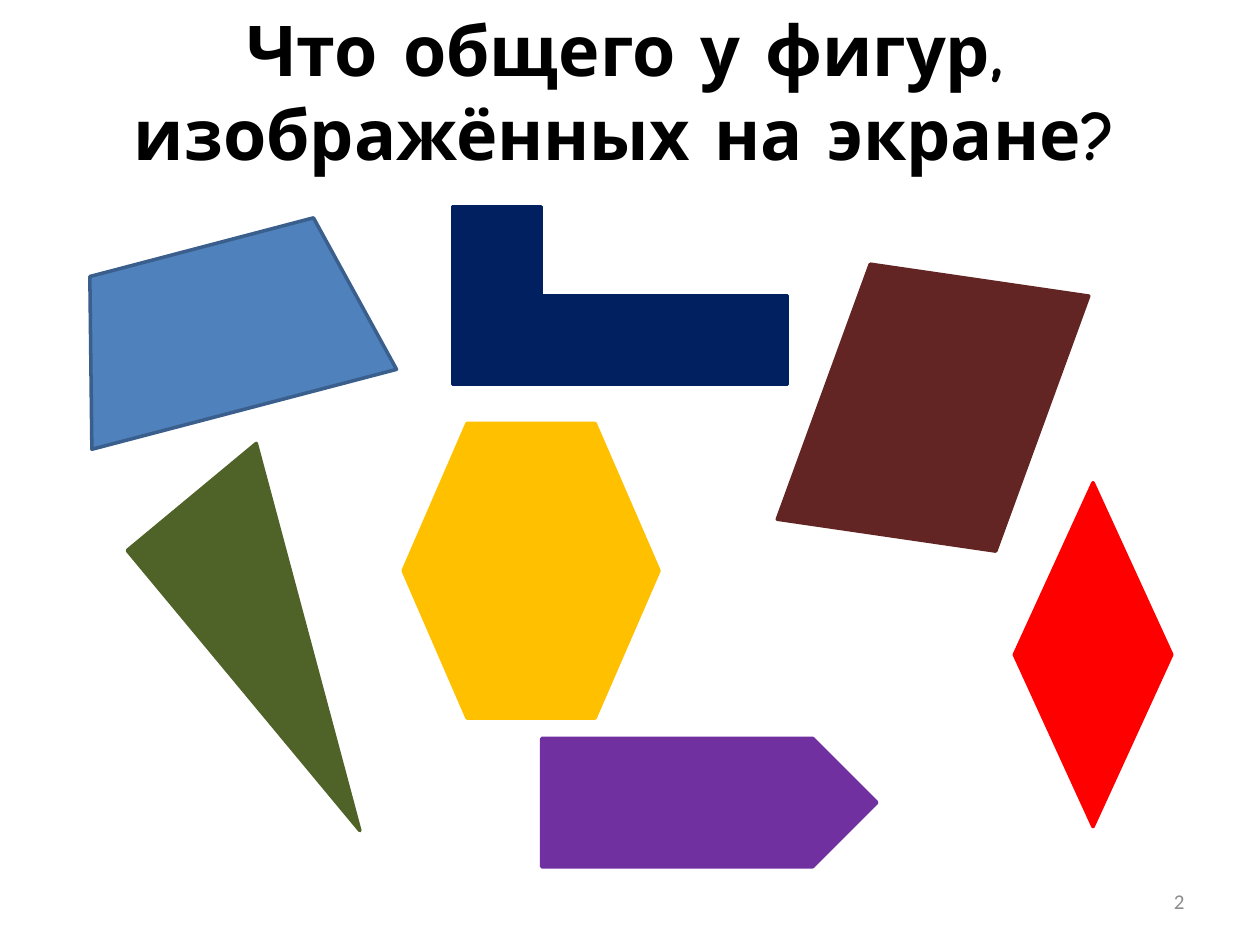
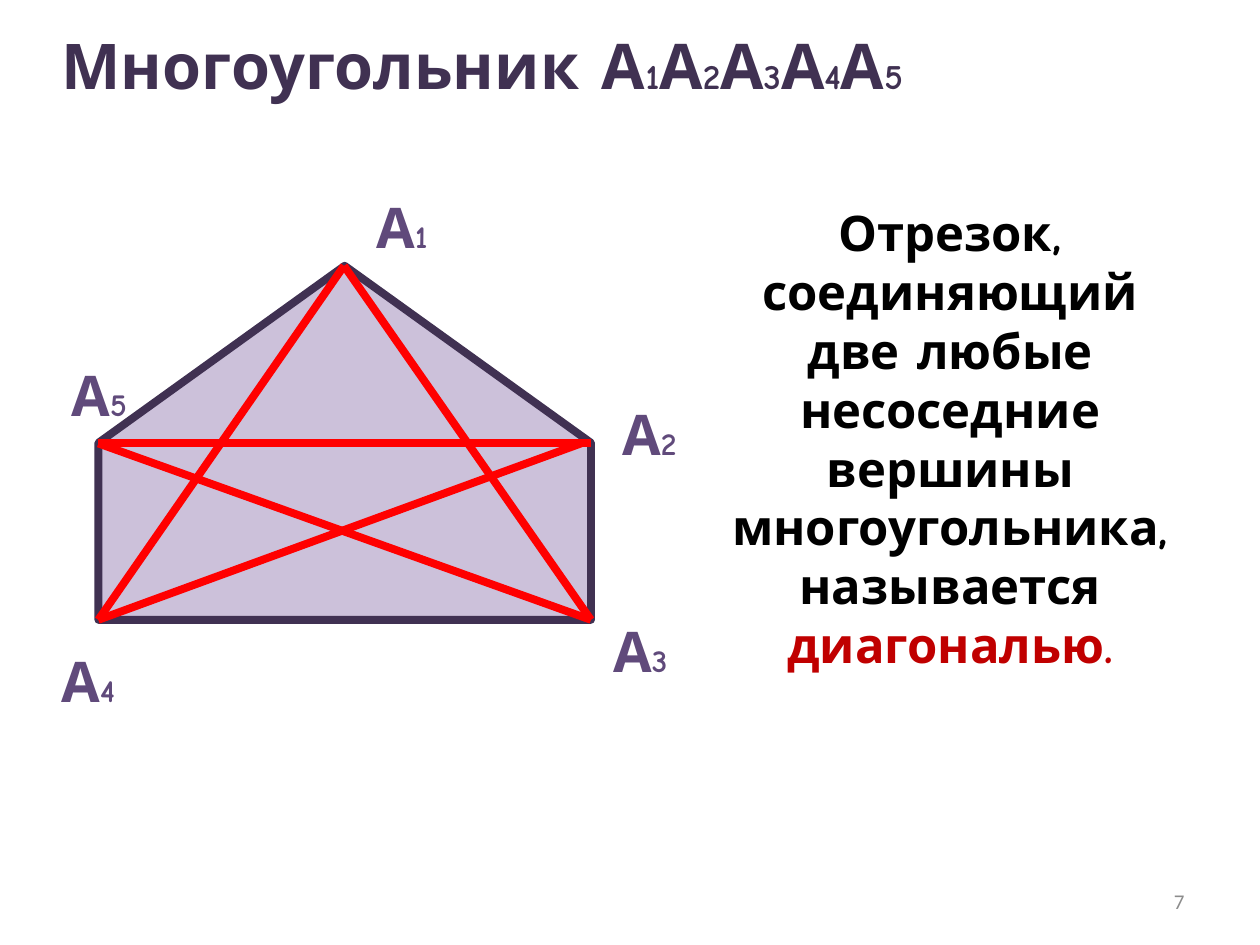
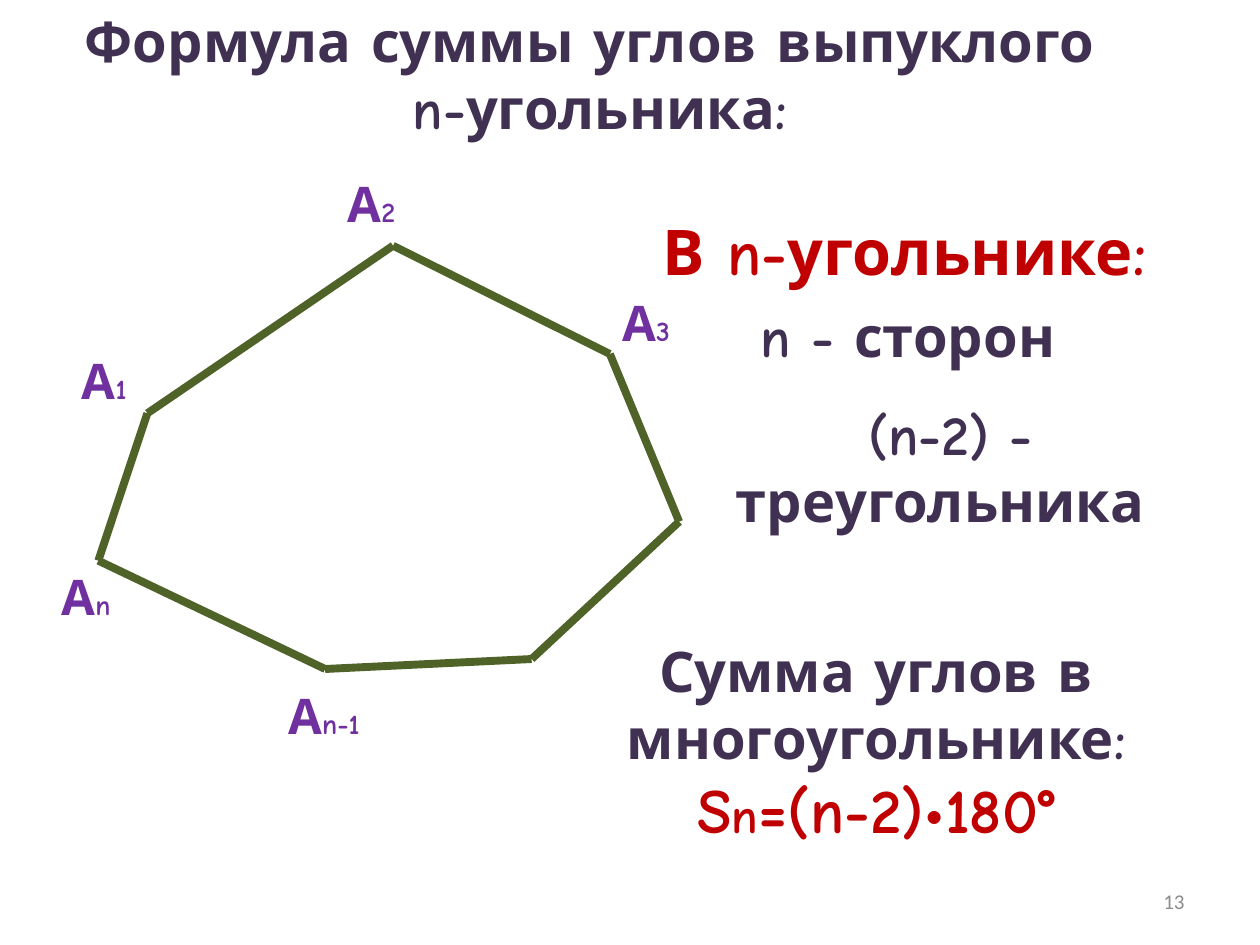
from dataclasses import dataclass
from typing import NamedTuple, Optional

from lxml import etree
from pptx import Presentation
from pptx.dml.color import RGBColor
from pptx.enum.shapes import MSO_CONNECTOR, MSO_SHAPE
from pptx.enum.text import MSO_ANCHOR, MSO_AUTO_SIZE, PP_ALIGN
from pptx.oxml.ns import qn
from pptx.util import Pt

LEFT, CENTER, RIGHT = PP_ALIGN.LEFT, PP_ALIGN.CENTER, PP_ALIGN.RIGHT
TOP, MIDDLE = MSO_ANCHOR.TOP, MSO_ANCHOR.MIDDLE
STRAIGHT = MSO_CONNECTOR.STRAIGHT


@dataclass(frozen=True)
class Theme:
    font: str = "Comic Neue"
    number_font: str = "Calibri"

    black: str = "000000"
    gray: str = "8C8C8C"
    plum: str = "403152"
    violet: str = "604A7B"
    lilac: str = "CCC1DA"
    purple: str = "7030A0"
    crimson: str = "C00000"
    red: str = "FF0000"
    olive: str = "4F6228"
    blue: str = "4F81BD"
    steel: str = "3A5F8C"
    navy: str = "002060"
    maroon: str = "632523"
    amber: str = "FFC000"

    headline: int = 40
    title: int = 36
    body: int = 32
    small_body: int = 28
    title_index: int = 20
    label_index: int = 18
    small_index: int = 16
    number: int = 12

    outline: float = 2
    stroke: float = 4.5


class Span(NamedTuple):
    """A piece of text; an unset size or colour comes from its box."""
    text: str
    size: Optional[int] = None
    color: Optional[str] = None


class Deck:
    def __init__(self, theme):
        self.theme = theme
        self.presentation = Presentation()
        self.presentation.slide_width = Pt(720)
        self.presentation.slide_height = Pt(540)
        self.page = None

    def new_page(self, number):
        blank = self.presentation.slide_layouts[6]
        self.page = self.presentation.slides.add_slide(blank)
        self.text((516, 500.4, 168, 28.8), [[Span(str(number))]],
                  self.theme.number, self.theme.gray, RIGHT, MIDDLE,
                  font=self.theme.number_font, bold=False)

    def text(self, place, paragraphs, size, color, align=LEFT, anchor=TOP,
             font=None, bold=True):
        box = self.page.shapes.add_textbox(*map(Pt, place))
        frame = box.text_frame
        frame.word_wrap = True
        frame.auto_size = MSO_AUTO_SIZE.NONE
        frame.vertical_anchor = anchor
        for index, spans in enumerate(paragraphs):
            para = frame.add_paragraph() if index else frame.paragraphs[0]
            para.alignment = align
            for span in spans:
                run = para.add_run()
                run.text = span.text
                run.font.name = font or self.theme.font
                run.font.size = Pt(span.size or size)
                run.font.bold = bold
                run.font.color.rgb = RGBColor.from_string(span.color or color)

    def vertex_label(self, place, index, size, index_size, color):
        self.text(place, [[Span("А"), Span(index, index_size)]], size, color)

    def figure(self, kind, place, fill, line=None, width=None, rotation=0):
        shape = self.page.shapes.add_shape(kind, *map(Pt, place))
        shape.shadow.inherit = False
        shape.rotation = rotation
        shape.fill.solid()
        shape.fill.fore_color.rgb = RGBColor.from_string(fill)
        shape.line.color.rgb = RGBColor.from_string(line or fill)
        shape.line.width = Pt(width or self.theme.outline)

    def segment(self, start, end, color):
        line = self.page.shapes.add_connector(STRAIGHT, *map(Pt, start + end))
        line.line.color.rgb = RGBColor.from_string(color)
        line.line.width = Pt(self.theme.stroke)
        etree.SubElement(line._element.spPr, qn("a:effectLst"))


def add_figures_page(deck):
    theme = deck.theme
    deck.new_page(2)
    figures = [
        (MSO_SHAPE.TRAPEZOID, (37.4, 139.7, 180, 95.8), theme.blue, 345.3),
        (MSO_SHAPE.CORNER, (258.5, 118.1, 191.5, 101.5), theme.navy, 0),
        (MSO_SHAPE.RIGHT_TRIANGLE, (72, 316.1, 208.1, 95.8), theme.olive, 50.3),
        (MSO_SHAPE.FLOWCHART_DATA, (454.3, 157, 157.7, 151.9), theme.maroon, 8.3),
        (MSO_SHAPE.HEXAGON, (230.4, 241.9, 146.2, 168.5), theme.amber, 0),
        (MSO_SHAPE.PENTAGON, (309.6, 421.9, 191.5, 73.4), theme.purple, 0),
        (MSO_SHAPE.DIAMOND, (579.6, 275.8, 90, 196.6), theme.red, 0),
    ]
    for kind, place, fill, rotation in figures:
        line = theme.steel if fill == theme.blue else fill
        deck.figure(kind, place, fill, line, rotation=rotation)
    deck.text((22.3, 0, 669.6, 104.4),
              [[Span("Что общего у фигур, изображённых на экране?")]],
              theme.headline, theme.black, CENTER)


def add_diagonals_page(deck):
    theme = deck.theme
    deck.new_page(7)
    deck.figure(MSO_SHAPE.PENTAGON, (95.8, 112.3, 202.3, 281.5), theme.lilac,
                theme.plum, theme.stroke, rotation=270)

    labels = [(208, 106.6, 73.4), (348.5, 224.6, 50.4), (343.4, 348.5, 50.4),
              (28.1, 365.8, 50.4), (33.8, 202.3, 50.4)]
    for index, (left, top, width) in enumerate(labels, start=1):
        deck.vertex_label((left, top, width, 46), str(index),
                          theme.body, theme.label_index, theme.violet)

    title = [Span("Многоугольник ")]
    for index in range(1, 6):
        title += [Span("А"), Span(str(index), theme.title_index)]
    deck.text((28.1, 11.5, 579.6, 51.1), [title], theme.title, theme.plum)
    deck.text((399.6, 112.3, 286.6, 244.8),
              [[Span("Отрезок, соединяющий две любые несоседние вершины "
                     "многоугольника, называется "),
                Span("диагональю.", color=theme.crimson)]],
              theme.small_body, theme.black, CENTER)

    left, right, shoulder, base = 56.2, 337.7, 253.4, 354.2
    a1, a2, a3 = (196.6, 151.9), (right, shoulder), (right, base)
    a4, a5 = (left, base), (left, shoulder)
    inside_a2 = (332, shoulder)
    for start, end in [(a4, a1), (a5, a2), (a3, a1), (a4, inside_a2), (a5, a3)]:
        deck.segment(start, end, theme.red)


def add_angle_sum_page(deck):
    theme = deck.theme
    deck.new_page(13)
    vertices = [(84.2, 236.2), (224.6, 140.4), (348.5, 202.3), (388.1, 298.1),
                (303.8, 376.6), (185.8, 382.3), (56.2, 320.4)]
    for start, end in zip(vertices, vertices[1:] + vertices[:1]):
        deck.segment(start, end, theme.olive)

    labels = [("1", 39.6, 196.6, 56.2), ("2", 191.5, 95.8, 56.2),
              ("3", 348.5, 163.4, 56.2), ("n-1", 157.7, 388.1, 78.5),
              ("n", 28.1, 320.4, 56.2)]
    for index, left, top, width in labels:
        deck.vertex_label((left, top, width, 41), index,
                          theme.small_body, theme.small_index, theme.purple)

    deck.text((16.6, 0, 652.3, 85),
              [[Span("Формула суммы углов выпуклого ")], [Span("n-угольника:")]],
              theme.body, theme.plum, CENTER)
    deck.text((371.5, 118.1, 315.4, 51.1), [[Span("В n-угольнике:")]],
              theme.title, theme.crimson)
    deck.text((427.7, 168.5, 230.4, 46), [[Span("n - сторон")]],
              theme.body, theme.plum)
    deck.text((399.6, 224.6, 286.6, 85), [[Span("(n-2) - треугольника ")]],
              theme.body, theme.plum, CENTER)
    formula = [Span("S", theme.title, theme.crimson),
               Span("n", theme.small_body, theme.crimson),
               Span("=(n-2)•180°", theme.title, theme.crimson)]
    deck.text((337.7, 360, 326.2, 128.2),
              [[Span("Сумма углов в многоугольнике:")], formula],
              theme.body, theme.plum, CENTER)


def main():
    deck = Deck(Theme())
    add_figures_page(deck)
    add_diagonals_page(deck)
    add_angle_sum_page(deck)
    deck.presentation.save("out.pptx")


if __name__ == "__main__":
    main()
